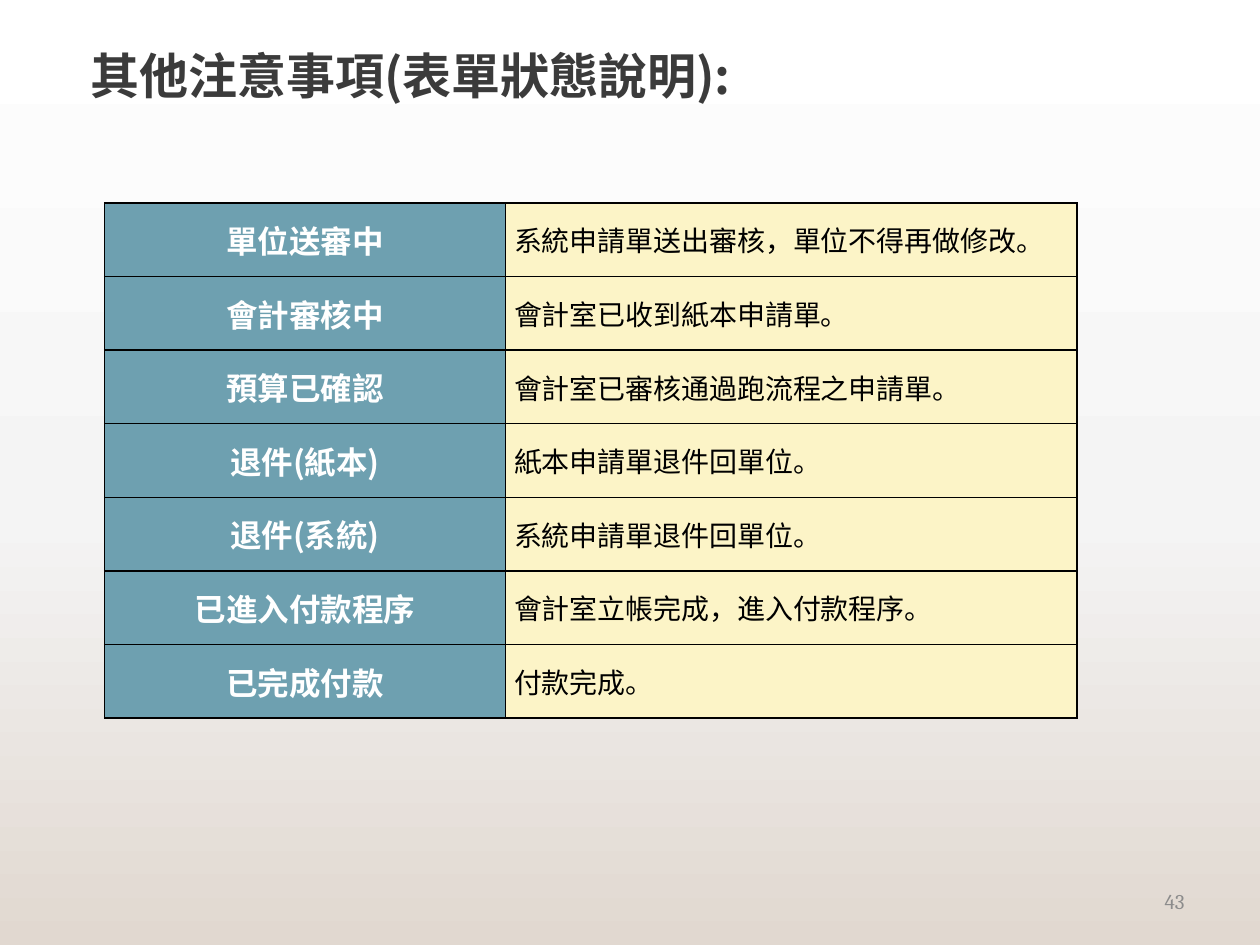
from copy import deepcopy

from lxml import etree
from pptx import Presentation
from pptx.dml.color import RGBColor
from pptx.enum.text import MSO_ANCHOR, PP_ALIGN
from pptx.oxml.ns import qn
from pptx.util import Inches, Pt

MID = MSO_ANCHOR.MIDDLE
LEFT, CENTER, RIGHT = PP_ALIGN.LEFT, PP_ALIGN.CENTER, PP_ALIGN.RIGHT
WIDE, HIGH = 10, 7.5
SANS, SERIF = "Noto Sans CJK SC", "Cambria"
HEX = {
    "title": "3B3B3B", "page": "8C8C8C", "line": "000000",
    "head": "6EA0B0", "note": "FCF4C7", "white": "FFFFFF", "black": "000000",
}
SKY = [(0, "FFFFFF"), (0.55, "F4F4F4"), (1, "E1D8D0")]
ROWS = [
    ("單位送審中", "系統申請單送出審核，單位不得再做修改。"),
    ("會計審核中", "會計室已收到紙本申請單。"),
    ("預算已確認", "會計室已審核通過跑流程之申請單。"),
    ("退件(紙本)", "紙本申請單退件回單位。"),
    ("退件(系統)", "系統申請單退件回單位。"),
    ("已進入付款程序", "會計室立帳完成，進入付款程序。"),
    ("已完成付款", "付款完成。"),
]


def color(name):
    return RGBColor.from_string(HEX[name])


def write(frame, text, size, tint, align=LEFT, bold=False, face=SANS):
    para = frame.paragraphs[0]
    para.alignment = align
    run = para.add_run()
    run.text = text
    font = run.font
    font.name, font.size, font.bold = face, Pt(size), bold
    font.color.rgb = color(tint)
    east = etree.SubElement(run._r.get_or_add_rPr(), qn("a:ea"))
    east.set("typeface", face)


def paint_back(slide):
    fill = slide.background.fill
    fill.gradient()
    fill.gradient_angle = 270
    stops = slide.element.find(".//" + qn("a:gsLst"))
    stops.insert(1, deepcopy(stops[0]))
    for stop, (place, tint) in zip(fill.gradient_stops, SKY):
        stop.position = place
        stop.color.rgb = RGBColor.from_string(tint)


def add_title(slide, box):
    title = slide.shapes.title
    title.left, title.top, title.width, title.height = map(Inches, box)
    title.text_frame.vertical_anchor = MID
    title.text_frame.word_wrap = True
    write(title.text_frame, "其他注意事項(表單狀態說明):", 28, "title", bold=True)


def add_page(slide, box):
    frame = slide.shapes.add_textbox(*map(Inches, box)).text_frame
    frame.word_wrap = True
    frame.vertical_anchor = MID
    write(frame, "43", 12, "page", RIGHT, face=SERIF)


def add_edges(cell):
    props = cell._tc.get_or_add_tcPr()
    for side in ("lnL", "lnR", "lnT", "lnB"):
        line = etree.SubElement(props, qn("a:" + side), w=str(Pt(1)))
        solid = etree.SubElement(line, qn("a:solidFill"))
        etree.SubElement(solid, qn("a:srgbClr"), val=HEX["line"])


def fill_cell(cell, text, back, *style):
    add_edges(cell)
    cell.fill.solid()
    cell.fill.fore_color.rgb = color(back)
    cell.vertical_anchor = MID
    cell.margin_left = cell.margin_right = Inches(0.07)
    cell.margin_top = cell.margin_bottom = 0
    write(cell.text_frame, text, *style)


def add_states(slide, box):
    left, top, width, height = map(Inches, box)
    table = slide.shapes.add_table(len(ROWS), 2, left, top, width, height).table
    table.first_row = table.horz_banding = False
    first = round(width * 0.412)
    table.columns[0].width, table.columns[1].width = first, width - first
    for row, (state, note) in enumerate(ROWS):
        fill_cell(table.cell(row, 0), state, "head", 18, "white", CENTER, True)
        fill_cell(table.cell(row, 1), note, "note", 16, "black")


def main():
    deck = Presentation()
    deck.slide_width, deck.slide_height = Inches(WIDE), Inches(HIGH)
    slide = deck.slides.add_slide(deck.slide_layouts.get_by_name("Title Only"))
    paint_back(slide)
    add_title(slide, (0.62, 0.31, 6.38, 0.57))
    add_states(slide, (0.83, 1.61, 7.72, 4.09))
    add_page(slide, (7.17, 6.95, 2.33, 0.4))
    deck.save("out.pptx")


if __name__ == "__main__":
    main()
